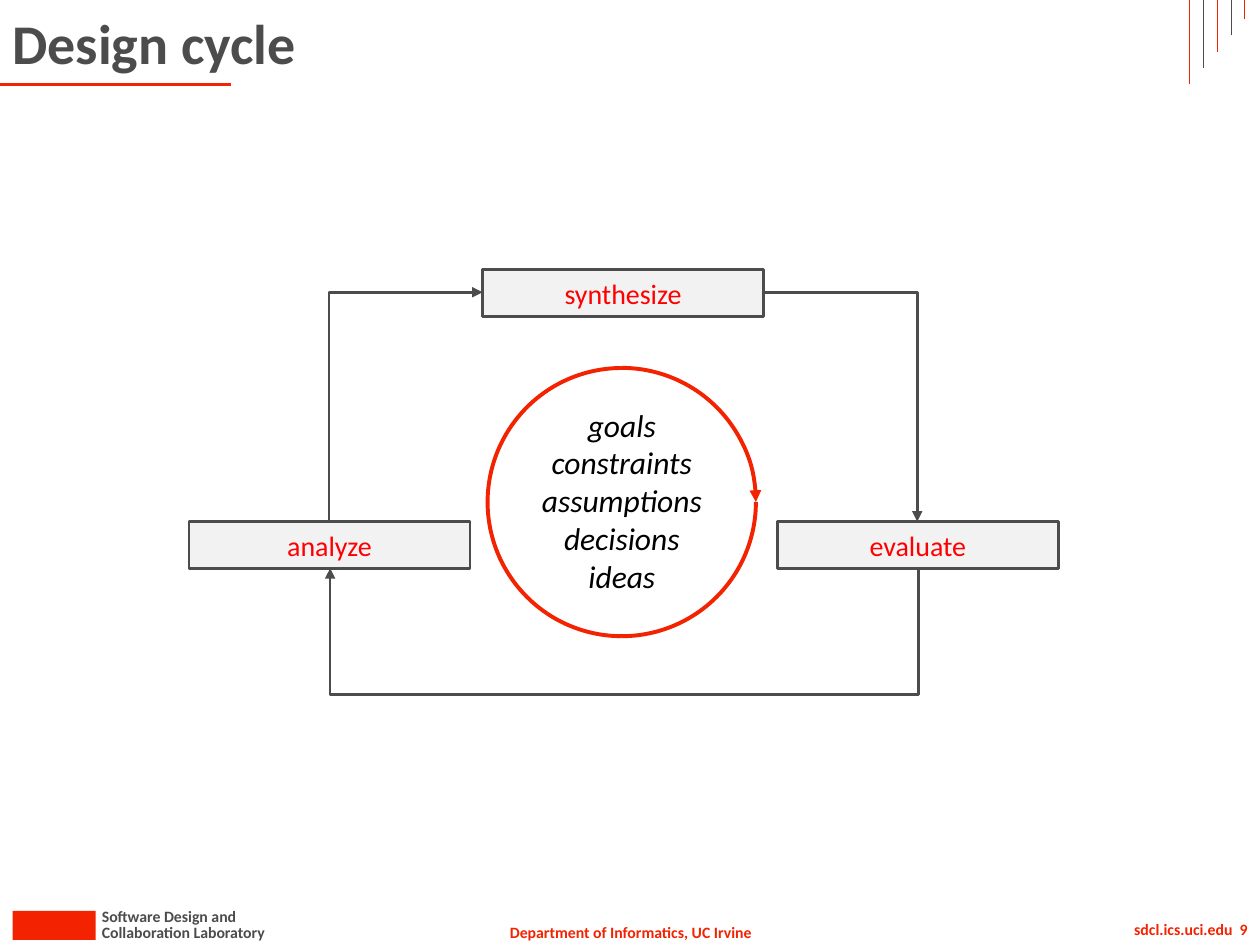
from pptx import Presentation
from pptx.dml.color import RGBColor
from pptx.enum.shapes import MSO_CONNECTOR as Link, MSO_SHAPE as Preset
from pptx.enum.text import MSO_ANCHOR as Anchor, PP_ALIGN as Align
from pptx.oxml.ns import qn
from pptx.util import Inches, Pt
from lxml.etree import SubElement

COLORS = {"red": "F32200", "gray": "4C4C4C", "step": "FF0000",
          "panel": "F2F2F2", "black": "000000"}
FONT = "Calibri"

TITLE = "Design cycle"
# text, left, top, width, height, format
FOOTER = [
    ("Department of Informatics, UC Irvine", 3.93, 7.27, 2.15, 0.25,
     dict(color="red", align=Align.CENTER, wrap=False)),
    ("Collaboration Laboratory", 0.71, 7.27, 1.53, 0.25, dict(wrap=False)),
    ("Software Design and", 0.71, 7.15, 1.29, 0.25, dict(wrap=False)),
    ("sdcl.ics.uci.edu  9", 7.84, 7.25, 2.16, 0.25,
     dict(color="red", align=Align.RIGHT)),
]
FOOTER_BLOCK = (0.1, 7.23, 0.66, 0.23)
STEPS = [("analyze", 1.5, 4.14), ("evaluate", 6.17, 4.14), ("synthesize", 3.83, 2.14)]
STEP_W, STEP_H = 2.23, 0.37
TOPICS = ["goals", "constraints", "assumptions", "decisions", "ideas"]
# start, end, preset, rotation, flipped both ways, depth of the detour
FLOWS = [
    ((2.61, 4.14), (3.83, 2.32), "bentConnector2", 90, True, None),
    ((6.06, 2.32), (7.28, 4.14), "bentConnector2", 0, False, None),
    ((7.29, 4.5), (2.62, 4.51), "bentConnector3", 90, False, 1.03),
]
# rotation, flipped vertically, with arrowhead
QUADRANTS = [(0, False, True), (0, True, False), (270, False, False), (90, True, False)]
RING = (3.87, 2.92, 2.13, 2.13)
BAR_COUNT, BAR_LEFT, BAR_GAP, BAR_LENGTH, BAR_STEP = 5, 9.44, 0.11, 0.67, 0.13

deck = Presentation()
deck.slide_width, deck.slide_height = Inches(10), Inches(7.5)
slide = deck.slides.add_slide(deck.slide_layouts[6])
shapes = slide.shapes


def rgb(name):
    return RGBColor.from_string(COLORS[name])


def inches(*values):
    return [Inches(value) for value in values]


def write(holder, text, size=9, color="gray", bold=False, italic=False,
          align=Align.LEFT, anchor=Anchor.TOP, wrap=True):
    frame = holder.text_frame
    frame.word_wrap = wrap
    frame.vertical_anchor = anchor
    frame.text = text
    for paragraph in frame.paragraphs:
        paragraph.alignment = align
        font = paragraph.runs[0].font
        font.name, font.size = FONT, Pt(size)
        font.bold, font.italic = bold, italic
        font.color.rgb = rgb(color)


def write_box(text, *place, **style):
    write(shapes.add_textbox(*inches(*place)), text, **style)


def add_block(fill, *place):
    block = shapes.add_shape(Preset.RECTANGLE, *inches(*place))
    block.shadow.inherit = False
    block.fill.solid()
    block.fill.fore_color.rgb = rgb(fill)
    block.line.fill.background()
    return block


def outline(part, color, width, arrow=False):
    part.line.color.rgb = rgb(color)
    part.line.width = Pt(width)
    if arrow:
        SubElement(part.line._get_or_add_ln(), qn("a:tailEnd"), type="triangle")


def add_line(kind, x1, y1, x2, y2, color, width, arrow=False):
    line = shapes.add_connector(kind, *inches(x1, y1, x2, y2))
    outline(line, color, width, arrow)
    SubElement(line._element.spPr, qn("a:effectLst"))
    return line


def add_flow(start, end, preset, rotation, flipped, depth):
    """Elbow arrow; a quarter turn swaps the sides of its frame."""
    (x1, y1), (x2, y2) = start, end
    width, height = abs(x2 - x1), abs(y2 - y1)
    if rotation:
        width, height = height, width
    left, top = (x1 + x2 - width) / 2, (y1 + y2 - height) / 2
    flow = add_line(Link.ELBOW, left, top, left + width, top + height, "gray", 1.5, True)
    properties = flow._element.spPr
    frame, geometry = properties.find(qn("a:xfrm")), properties.find(qn("a:prstGeom"))
    geometry.set("prst", preset)
    if rotation:
        frame.set("rot", str(rotation * 60000))
    if flipped:
        frame.set("flipH", "1")
        frame.set("flipV", "1")
    if depth:
        SubElement(geometry.find(qn("a:avLst")), qn("a:gd"), name="adj1",
                   fmla=f"val {round(depth / width * 100000)}")


for text, *place, style in FOOTER:
    write_box(text, *place, bold=True, **style)
add_block("red", *FOOTER_BLOCK)

add_line(Link.STRAIGHT, 0, 0.67, 1.83, 0.67, "red", 1.5)
for i in range(BAR_COUNT):
    x = BAR_LEFT + i * BAR_GAP
    add_line(Link.STRAIGHT, x, BAR_LENGTH - i * BAR_STEP, x, 0,
             "gray" if i % 2 else "red", 0.5)

write_box(TITLE, 0, 0, 9, 0.67, size=32, bold=True, anchor=Anchor.MIDDLE)

for name, left, top in STEPS:
    step = add_block("panel", left, top, STEP_W, STEP_H)
    outline(step, "gray", 1.5)
    write(step, name, size=16, color="step", align=Align.CENTER, anchor=Anchor.MIDDLE)

for flow in FLOWS:
    add_flow(*flow)

ring = shapes.add_group_shape()
for rotation, flipped, arrow in QUADRANTS:
    quadrant = ring.shapes.add_shape(Preset.ARC, *inches(*RING))
    quadrant.shadow.inherit = False
    quadrant.fill.background()
    outline(quadrant, "red", 2.25, arrow)
    quadrant.rotation = rotation
    if flipped:
        quadrant._element.spPr.find(qn("a:xfrm")).set("flipV", "1")

write_box("\n".join(TOPICS), 4.19, 3.17, 1.49, 1.62, size=18, color="black",
          italic=True, align=Align.CENTER, wrap=False)

deck.save("out.pptx")
